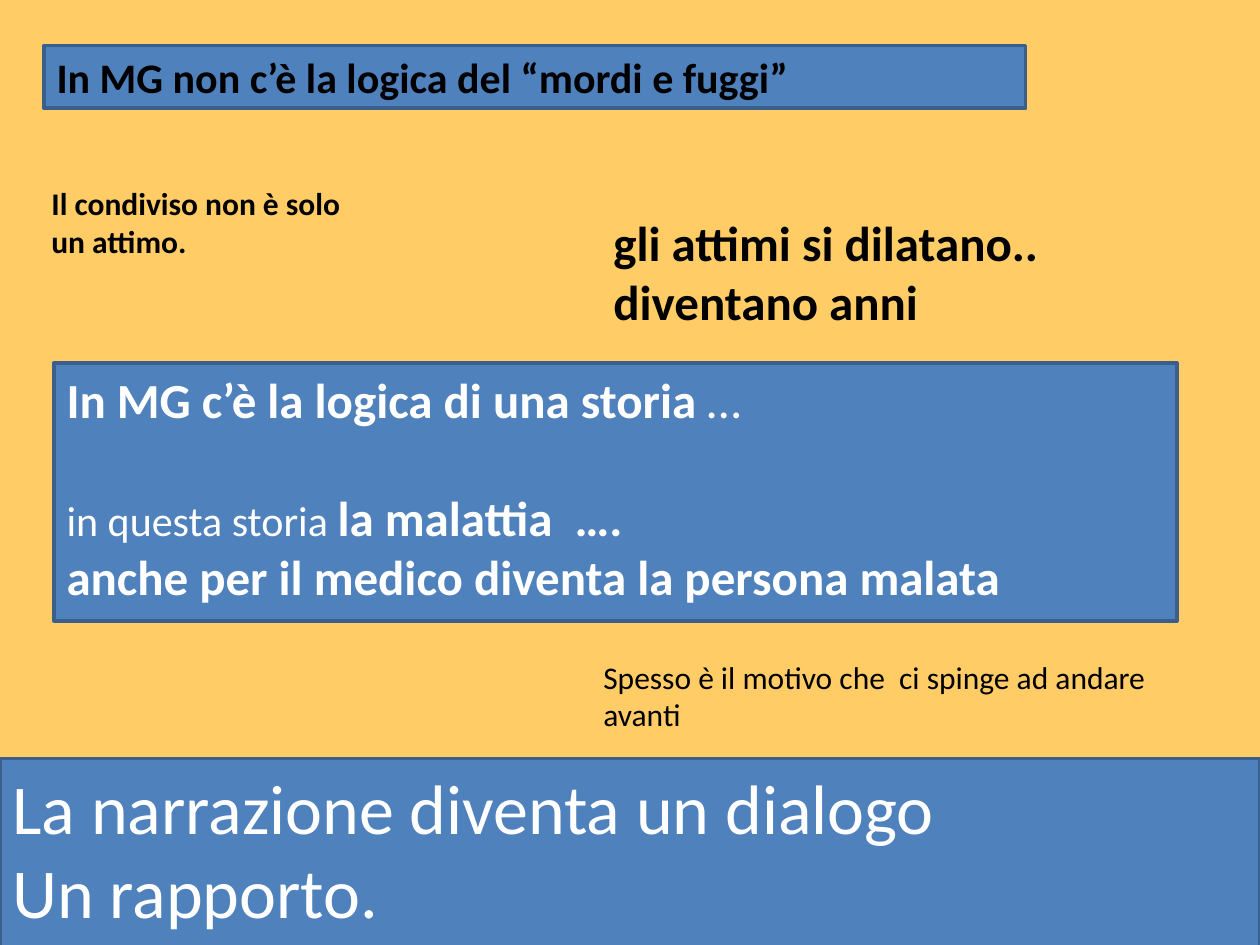
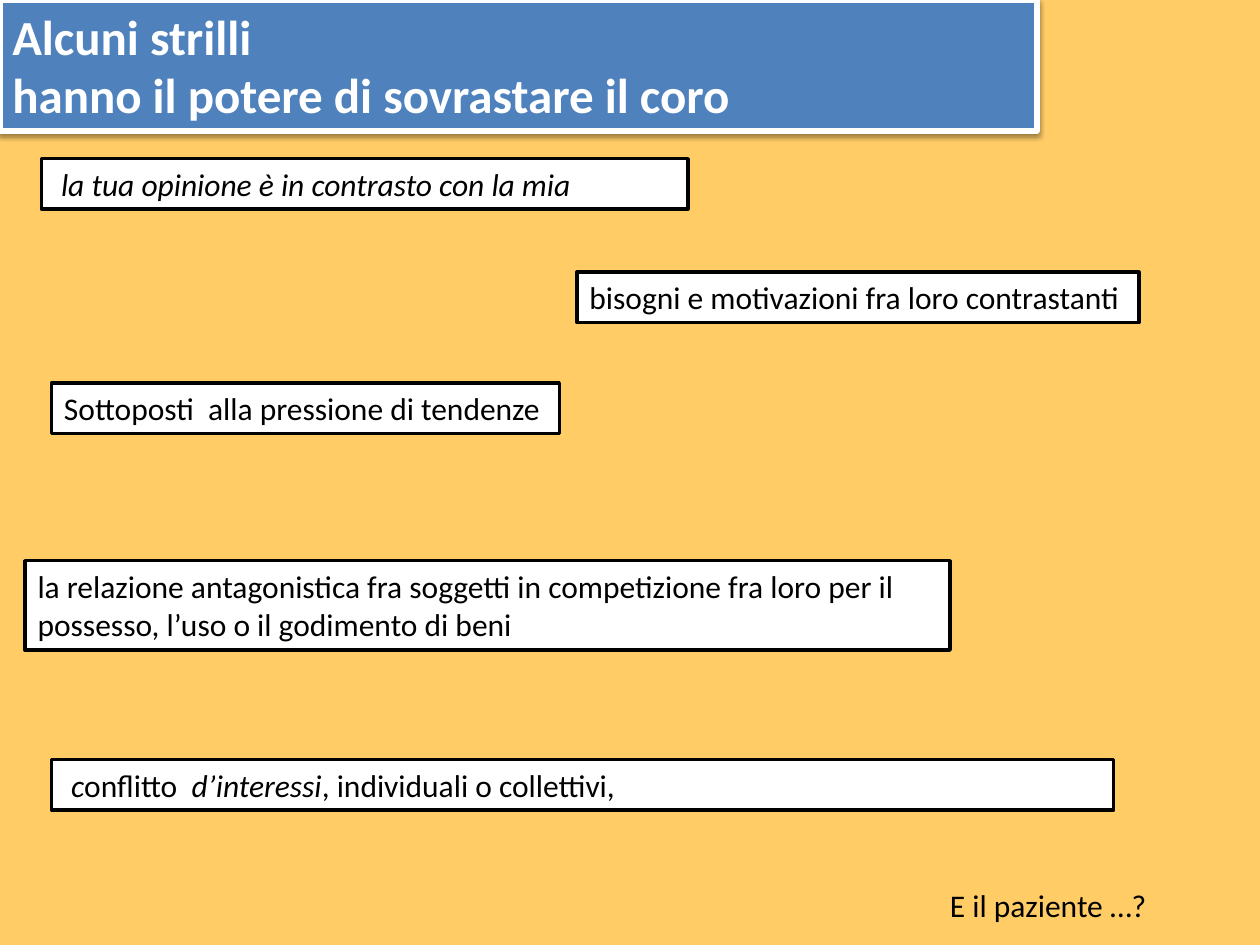
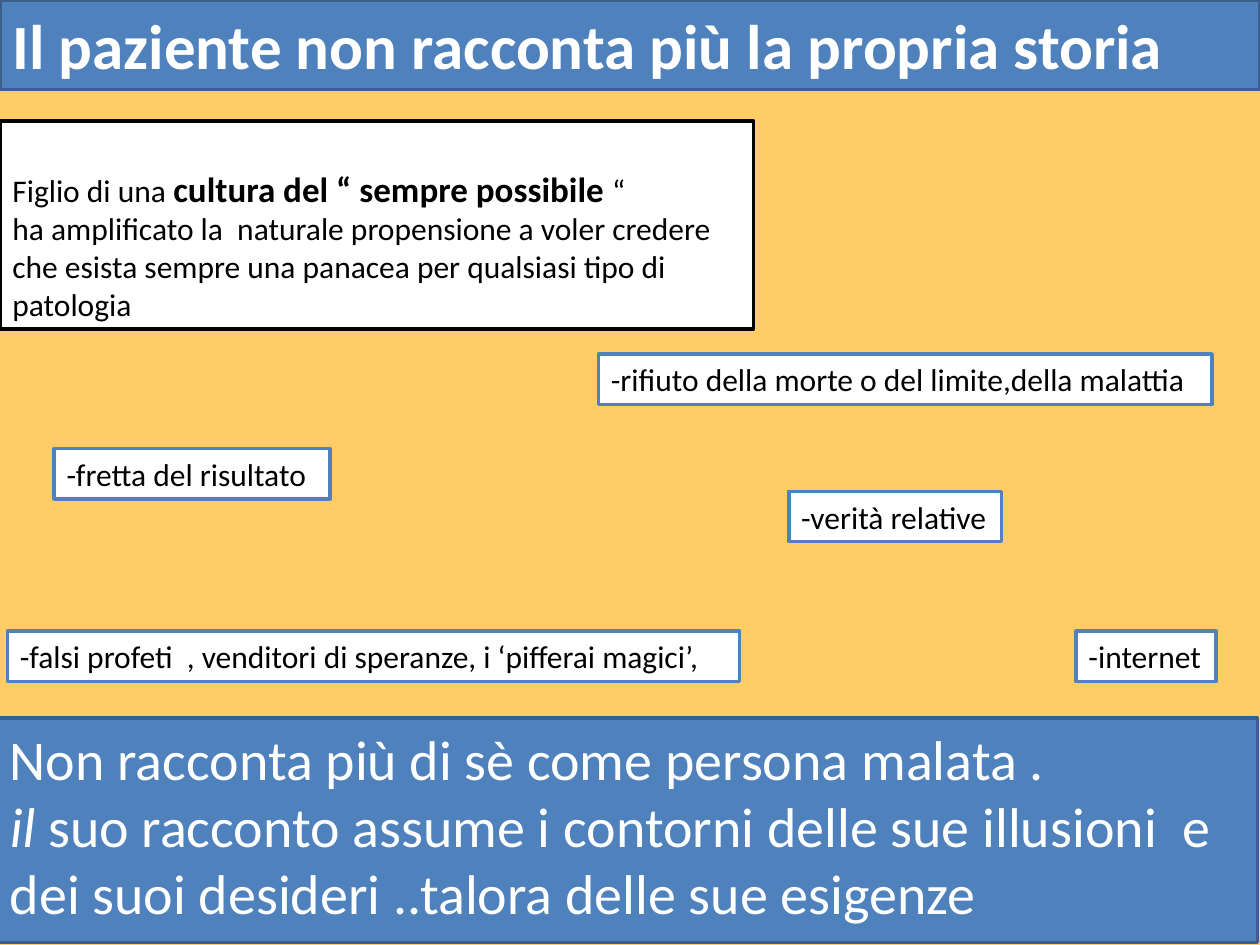
"""Build three slides on storytelling between doctor and patient."""

from dataclasses import dataclass, field
from typing import Optional

from lxml.etree import SubElement
from pptx import Presentation
from pptx.dml.color import RGBColor
from pptx.enum.shapes import MSO_SHAPE
from pptx.enum.text import MSO_ANCHOR, PP_ALIGN
from pptx.oxml.ns import qn
from pptx.util import Inches, Pt

COLORS = {
    "background": "FFCC66",
    "band": "4F81BD",
    "band_edge": "3A5F8C",
    "paper": "FFFFFF",
    "ink": "000000",
}
FONT = "Calibri"
LINE_HEIGHT = 1.22


@dataclass(frozen=True)
class Style:
    text: str = "ink"
    fill: Optional[str] = None
    line: Optional[str] = None
    line_width: float = 2
    shadow: bool = False


PLAIN = Style()
BAND = Style("paper", "band", "band_edge")
DARK_BAND = Style("ink", "band", "band_edge")
RAISED_BAND = Style("paper", "band", "paper", 3, True)
NOTE = Style("ink", "paper", "ink")
BLUE_NOTE = Style("ink", "paper", "band")


@dataclass(frozen=True)
class Span:
    text: str
    size: Optional[float] = None
    bold: Optional[bool] = None
    italic: bool = False


@dataclass(frozen=True)
class Para:
    spans: list[Span]
    space_before: float = 0


@dataclass(frozen=True)
class Box:
    left: float
    top: float
    width: float
    height: float
    style: Style
    paras: list[str | Para] = field(default_factory=list)
    size: float = 18
    bold: bool = False
    anchor: MSO_ANCHOR = MSO_ANCHOR.TOP


def color(name: str) -> RGBColor:
    """Return a palette colour."""
    return RGBColor.from_string(COLORS[name])


def add_shadow(shape) -> None:
    """Cast a soft shadow straight down."""
    effects = shape._element.spPr.find(qn("a:effectLst"))
    shadow = SubElement(effects, qn("a:outerShdw"), blurRad=str(Pt(3.1)),
                        dist=str(Pt(1.6)), dir="5400000", rotWithShape="0")
    tint = SubElement(shadow, qn("a:srgbClr"), val=COLORS["ink"])
    SubElement(tint, qn("a:alpha"), val="38000")


def add_frame(page, box: Box):
    """Add the filled rectangle or bare text box that holds the text."""
    place = [Inches(n) for n in (box.left, box.top, box.width, box.height)]
    style = box.style
    if style.fill is None:
        return page.shapes.add_textbox(*place)
    shape = page.shapes.add_shape(MSO_SHAPE.RECTANGLE, *place)
    shape.fill.solid()
    shape.fill.fore_color.rgb = color(style.fill)
    shape.line.color.rgb = color(style.line)
    shape.line.width = Pt(style.line_width)
    shape.shadow.inherit = False
    if style.shadow:
        add_shadow(shape)
    return shape


def draw_box(page, box: Box) -> None:
    """Draw a box and its formatted paragraphs."""
    frame = add_frame(page, box).text_frame
    frame.word_wrap = True
    frame.vertical_anchor = box.anchor
    for index, content in enumerate(box.paras):
        para = content if isinstance(content, Para) else Para([Span(content)])
        paragraph = frame.add_paragraph() if index else frame.paragraphs[0]
        paragraph.alignment = PP_ALIGN.LEFT
        if para.space_before:
            paragraph.space_before = Pt(para.space_before)
        for span in para.spans:
            run = paragraph.add_run()
            run.text = span.text
            run.font.name = FONT
            run.font.size = Pt(span.size or box.size)
            run.font.bold = box.bold if span.bold is None else span.bold
            run.font.italic = span.italic
            run.font.color.rgb = color(box.style.text)


STORY = [
    Box(0, 6.02, 10, 1.75, BAND,
        ["La narrazione diventa un dialogo", "Un rapporto."], 40),
    Box(4.69, 5.17, 5, 0.71, PLAIN,
        ["Spesso è il motivo che  ci spinge ad andare avanti"]),
    Box(0.35, 0.36, 7.79, 0.5, DARK_BAND,
        ["In MG non c’è la logica del “mordi e fuggi”"], 24, True),
    Box(4.77, 1.64, 4.61, 1.04, PLAIN,
        ["gli attimi si dilatano.. diventano anni"], 28, True),
    Box(0.31, 1.41, 2.5, 0.71, PLAIN,
        ["Il condiviso non è solo un attimo."], 18, True),
    Box(0.43, 2.88, 8.91, 2.05, BAND, [
        Para([Span("In MG c’è la logica di una storia "), Span("…", bold=False)]),
        Para([Span("in questa storia ", 24, False), Span("la malattia  ….")],
             28 * LINE_HEIGHT),
        "anche per il medico diventa la persona malata",
    ], 28, True),
]

CHORUS = [
    Box(0, 0, 8.23, 1.04, RAISED_BAND,
        ["Alcuni strilli", "hanno il potere di sovrastare il coro"], 28, True),
    Box(0.2, 4.45, 7.34, 0.71, NOTE,
        ["la relazione antagonistica fra soggetti in competizione fra loro "
         "per il possesso, l’uso o il godimento di beni"]),
    Box(0.41, 6.03, 8.43, 0.4, NOTE, [
        Para([Span(" "), Span("c", italic=True), Span("onflitto  "),
              Span("d’interessi", italic=True),
              Span(", individuali o collettivi,")]),
    ]),
    Box(0.41, 3.04, 4.03, 0.4, NOTE, ["Sottoposti  alla pressione di tendenze"]),
    Box(4.58, 2.16, 4.46, 0.4, NOTE,
        ["bisogni e motivazioni fra loro contrastanti"]),
    Box(0.33, 1.26, 5.13, 0.4, NOTE, [
        Para([Span(" "),
              Span("la tua opinione è in contrasto con la mia", italic=True)]),
    ]),
    Box(7.44, 6.98, 1.78, 0.4, PLAIN, ["E il paziente …?"]),
]

PATIENT = [
    Box(0, 0, 10, 0.71, BAND,
        ["Il paziente non racconta più la propria storia"], 36, True),
    Box(-0.02, 5.7, 10, 1.78, BAND, [
        "Non racconta più di sè come persona malata .",
        Para([Span("il", italic=True),
              Span(" suo racconto assume i contorni delle sue illusioni  e "
                   "dei suoi desideri ..talora delle sue esigenze")]),
    ], 32),
    Box(0, 0.96, 5.98, 1.65, NOTE, [
        Para([Span("Figlio di una "),
              Span("cultura del “ sempre possibile ", 20, True), Span("“")]),
        "ha amplificato la  naturale propensione a voler credere che esista "
        "sempre una panacea per qualsiasi tipo di patologia",
    ], anchor=MSO_ANCHOR.BOTTOM),
    Box(6.26, 3.9, 1.69, 0.4, BLUE_NOTE, ["-verità relative"]),
    Box(4.75, 2.81, 4.87, 0.4, BLUE_NOTE,
        ["-rifiuto della morte o del limite,della malattia"]),
    Box(8.54, 5.01, 1.11, 0.4, BLUE_NOTE, ["-internet"]),
    Box(0.43, 3.56, 2.19, 0.4, BLUE_NOTE, ["-fretta del risultato"]),
    Box(0.06, 5.01, 5.81, 0.4, BLUE_NOTE,
        ["-falsi profeti  , venditori di speranze, i ‘pifferai magici’,"]),
]


def main() -> None:
    """Build and save the deck."""
    deck = Presentation()
    deck.slide_width = Inches(10)
    deck.slide_height = Inches(7.5)
    for boxes in (STORY, CHORUS, PATIENT):
        page = deck.slides.add_slide(deck.slide_layouts[6])
        page.background.fill.solid()
        page.background.fill.fore_color.rgb = color("background")
        for box in boxes:
            draw_box(page, box)
    deck.save("out.pptx")


if __name__ == "__main__":
    main()
